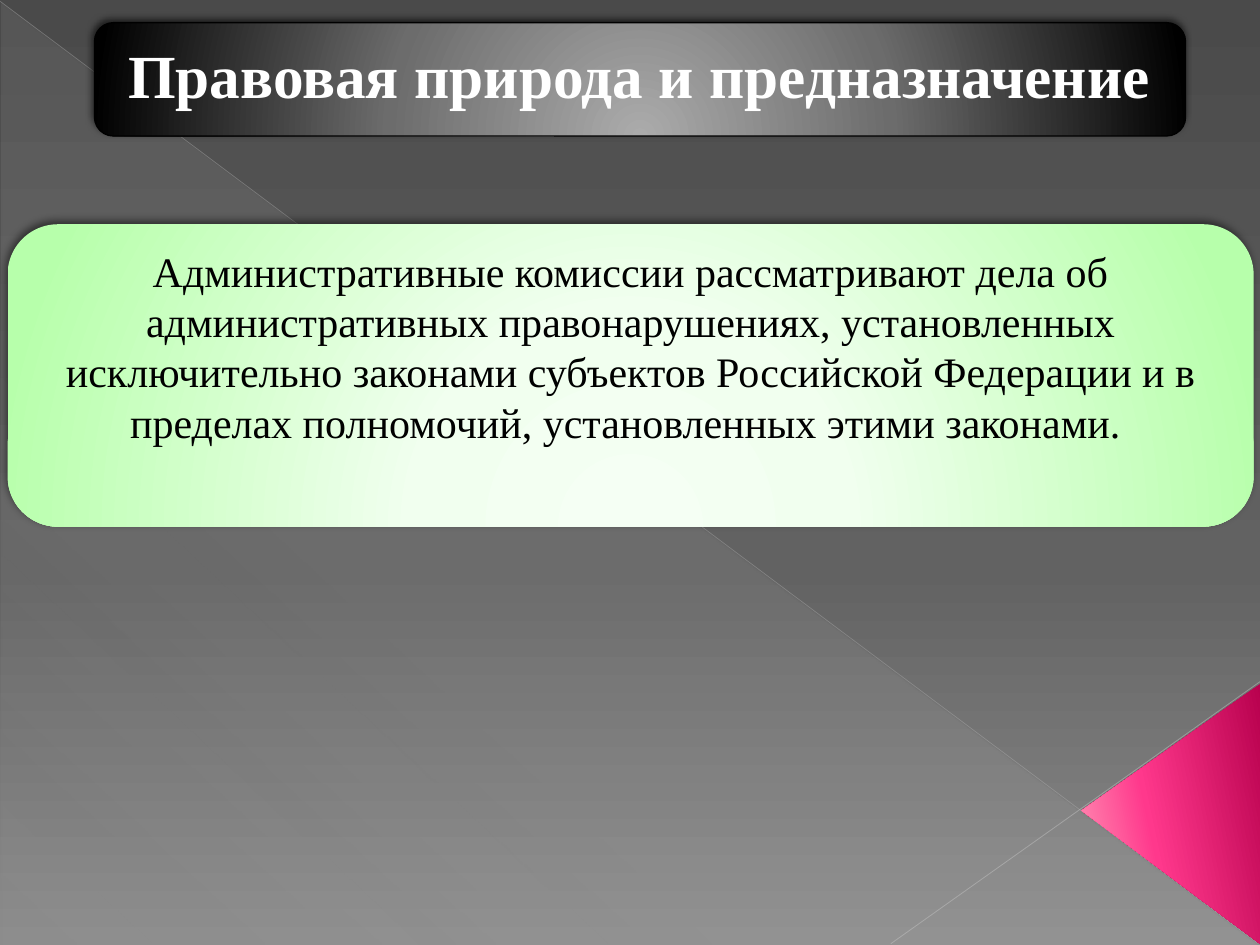
from dataclasses import dataclass
from typing import Optional

from lxml import etree
from pptx import Presentation
from pptx.dml.color import RGBColor
from pptx.enum import shapes, text
from pptx.oxml import ns
from pptx.util import Inches, Pt


@dataclass(frozen=True)
class Gradient:
    """Stops are (position %, colour, opacity %); no angle means a circular path."""
    stops: tuple
    angle: Optional[int] = None


@dataclass(frozen=True)
class Shadow:
    opacity: int
    blur: float
    dist: float
    angle: int = 245
    color: str = "000000"


@dataclass(frozen=True)
class Theme:
    font: str = "Times New Roman"
    title_size: int = 35
    body_size: int = 24
    title_color: str = "FFFFFF"
    body_color: str = "000000"
    outline: str = "000000"
    background: Gradient = Gradient(
        ((0, "4A4A4A", 100), (60, "626262", 100), (100, "8C8C8C", 100)), 90)
    veil: Gradient = Gradient(
        ((0, "D2D2D2", 10), (70, "D2D2D2", 8), (100, "D2D2D2", 1)), 133)
    corner: Gradient = Gradient(
        ((0, "B8014E", 100), (60, "FF388C", 100), (100, "FF9CB9", 100)), 258)
    title: Gradient = Gradient(
        ((0, "ABABAB", 100), (46, "6C6C6C", 100), (100, "000000", 100)))
    body: Gradient = Gradient(
        ((0, "F5FFF4", 100), (34, "F1FFEF", 100), (100, "B7FFAB", 100)))


@dataclass(frozen=True)
class Panel:
    kind: shapes.MSO_SHAPE
    box: tuple
    fill: Gradient
    rotation: int = 0
    adjust: Optional[float] = None
    outline: Optional[str] = None
    shadow: Optional[Shadow] = None


@dataclass(frozen=True)
class Ray:
    start: tuple
    end: tuple
    color: str
    width: float
    opacity: int


THEME = Theme()
KIND = shapes.MSO_SHAPE
BACKDROP = (
    Panel(KIND.RIGHT_TRIANGLE, (0.01, 0.02, 9.98, 7.48), THEME.veil),
    Ray((0, 0.01), (9.99, 7.49), "BFBFBF", 0.39, 35),
    Ray((10, 5.41), (7.07, 7.49), "C6C6C6", 0.47, 45),
    Panel(KIND.ISOSCELES_TRIANGLE, (8.26, 5.75, 2.07, 1.42), THEME.corner,
          rotation=270, adjust=0.513),
)
TITLE_PANEL = Panel(KIND.ROUNDED_RECTANGLE, (0.75, 0.18, 8.66, 0.9), THEME.title,
                    outline=THEME.outline, shadow=Shadow(60, 4, 3))
BODY_PANEL = Panel(KIND.ROUNDED_RECTANGLE, (0.06, 1.78, 9.89, 2.4), THEME.body,
                   shadow=Shadow(50, 5, 2))
TITLE = "Правовая природа и предназначение"
BODY = ("Административные комиссии рассматривают дела об административных "
        "правонарушениях, установленных исключительно законами субъектов "
        "Российской Федерации и в пределах полномочий, установленных этими законами. ")


def add(parent, tag: str, **attrs):
    child = etree.SubElement(parent, ns.qn(tag))
    for key, value in attrs.items():
        child.set(key, str(value))
    return child


def add_color(parent, color: str, opacity: int) -> None:
    clr = add(parent, "a:srgbClr", val=color)
    if opacity < 100:
        add(clr, "a:alpha", val=opacity * 1000)


def set_gradient(fill, owner, gradient: Gradient) -> None:
    """Swap the owner's plain fill for the gradient."""
    fill.solid()
    plain = owner.find(ns.qn("a:solidFill"))
    grad = add(owner, "a:gradFill", rotWithShape=1)
    stops = add(grad, "a:gsLst")
    for position, color, opacity in gradient.stops:
        add_color(add(stops, "a:gs", pos=position * 1000), color, opacity)
    if gradient.angle is None:
        circle = add(grad, "a:path", path="circle")
        add(circle, "a:fillToRect", l=50000, t=155000, r=50000, b=-55000)
    else:
        add(grad, "a:lin", ang=gradient.angle * 60000, scaled=0)
    owner.replace(plain, grad)


def draw_panel(slide, panel: Panel):
    sp = slide.shapes.add_shape(panel.kind, *map(Inches, panel.box))
    sp.rotation = panel.rotation
    if panel.adjust is not None:
        sp.adjustments[0] = panel.adjust
    set_gradient(sp.fill, sp.element.spPr, panel.fill)
    if panel.outline:
        sp.line.color.rgb = RGBColor.from_string(panel.outline)
        sp.line.width = Pt(0.75)
    else:
        sp.line.fill.background()
    sp.shadow.inherit = False
    if panel.shadow:
        shadow = panel.shadow
        effects = sp.element.spPr.find(ns.qn("a:effectLst"))
        outer = add(effects, "a:outerShdw", blurRad=Pt(shadow.blur),
                    dist=Pt(shadow.dist), dir=shadow.angle * 60000, rotWithShape=0)
        add_color(outer, shadow.color, shadow.opacity)
    return sp


def draw_ray(slide, ray: Ray) -> None:
    line = slide.shapes.add_connector(
        shapes.MSO_CONNECTOR.STRAIGHT, *map(Inches, ray.start + ray.end))
    line.line.color.rgb = RGBColor.from_string(ray.color)
    line.line.width = Pt(ray.width)
    clr = line.line.fill._xPr.find(".//" + ns.qn("a:srgbClr"))
    add(clr, "a:alpha", val=ray.opacity * 1000)
    add(line.element.spPr, "a:effectLst")


def write(sp, wording: str, size: int, color: str, bold: bool, frame: dict) -> None:
    tf = sp.text_frame
    for name, value in {"word_wrap": True, **frame}.items():
        setattr(tf, name, value)
    p = tf.paragraphs[0]
    p.alignment = text.PP_ALIGN.CENTER
    r = p.add_run()
    r.text = wording
    for name, value in {"name": THEME.font, "size": Pt(size), "bold": bold}.items():
        setattr(r.font, name, value)
    r.font.color.rgb = RGBColor.from_string(color)


def main() -> None:
    prs = Presentation()
    prs.slide_width, prs.slide_height = Inches(10), Inches(7.5)
    slide = prs.slides.add_slide(prs.slide_layouts[6])
    background = slide.background.fill
    background.solid()
    set_gradient(background, slide.element.find(".//" + ns.qn("p:bgPr")),
                 THEME.background)

    for item in BACKDROP:
        draw = draw_ray if isinstance(item, Ray) else draw_panel
        draw(slide, item)

    draw_panel(slide, TITLE_PANEL)
    title = slide.shapes.add_textbox(*map(Inches, (0.79, 0.22, 8.57, 0.81)))
    margins = {f"margin_{side}": Inches(0.15)
               for side in ("left", "top", "right", "bottom")}
    write(title, TITLE, THEME.title_size, THEME.title_color, True,
          {"vertical_anchor": text.MSO_ANCHOR.MIDDLE, **margins})
    title.text_frame.paragraphs[0].line_spacing = 0.9

    body = draw_panel(slide, BODY_PANEL)
    write(body, BODY, THEME.body_size, THEME.body_color, False,
          {"vertical_anchor": text.MSO_ANCHOR.TOP})
    prs.save("out.pptx")


if __name__ == "__main__":
    main()
